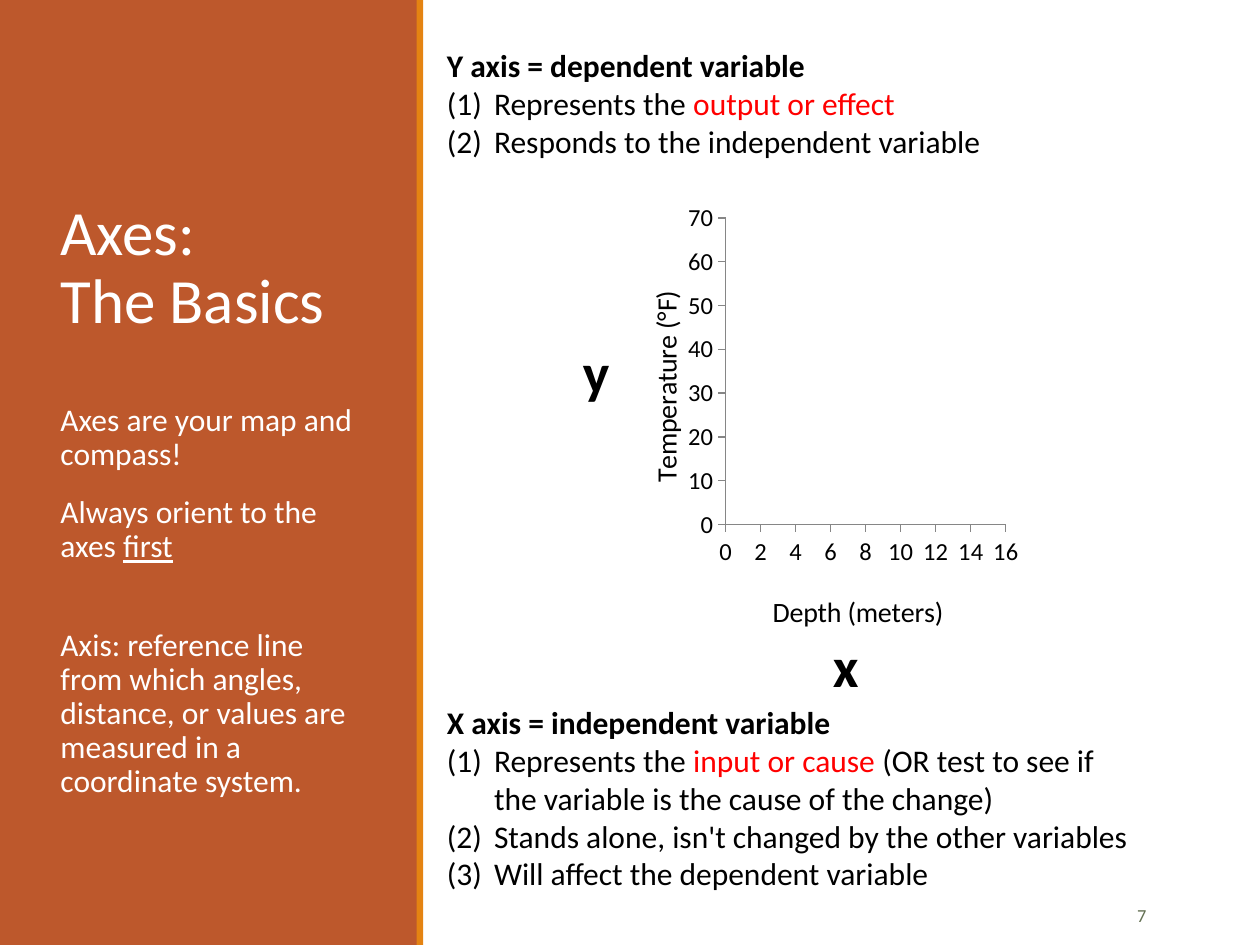
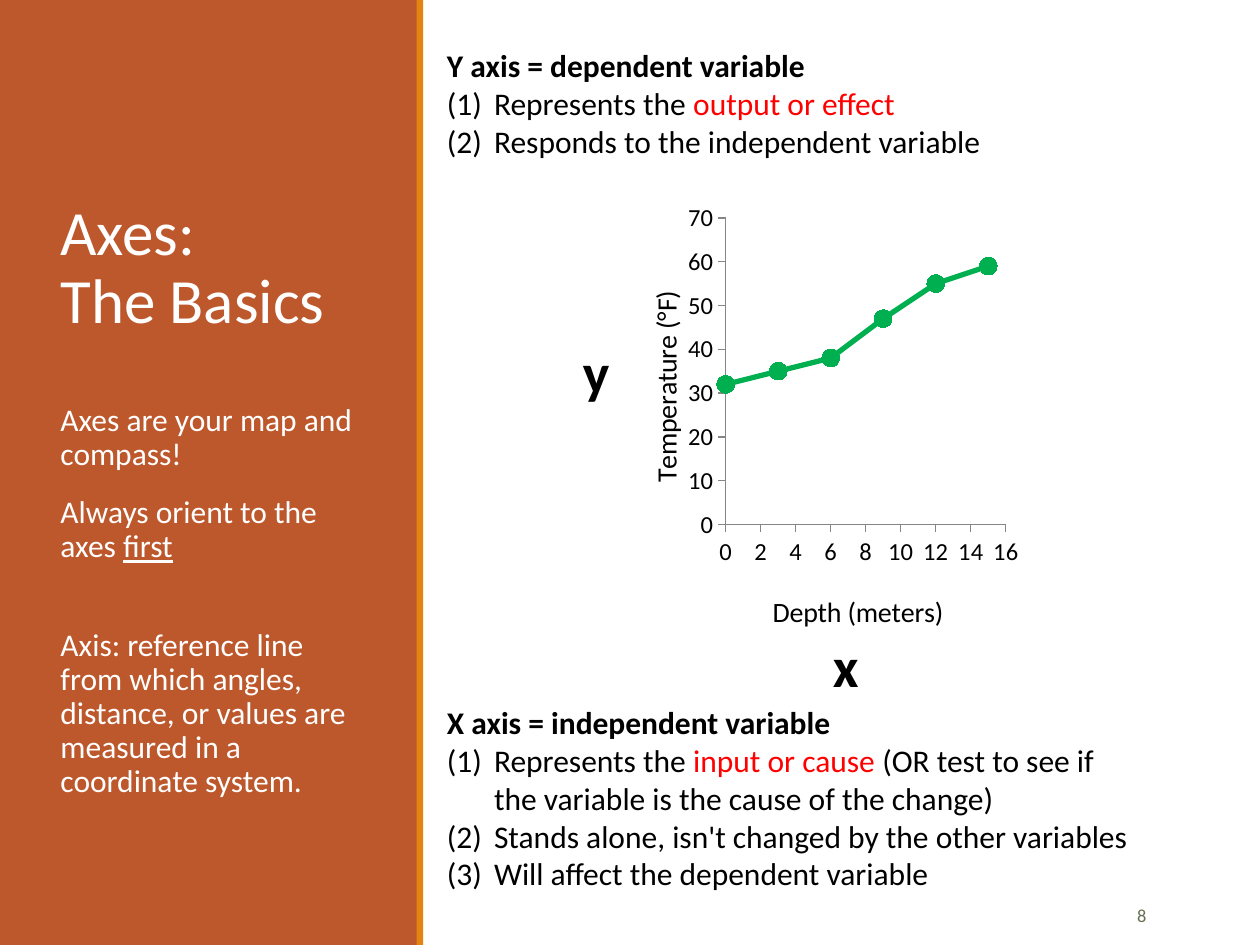
from lxml import etree
from pptx import Presentation
from pptx.chart.data import XyChartData
from pptx.dml.color import RGBColor
from pptx.enum.chart import XL_CHART_TYPE as ChartType
from pptx.enum.chart import XL_MARKER_STYLE as Marker
from pptx.enum.chart import XL_TICK_MARK as Tick
from pptx.enum.shapes import MSO_SHAPE as Shape
from pptx.enum.text import MSO_ANCHOR as Anchor
from pptx.enum.text import PP_ALIGN as Align
from pptx.oxml.ns import qn
from pptx.util import Cm, Pt

RUST = RGBColor(0xBD, 0x58, 0x2C)
ORANGE = RGBColor(0xE4, 0x83, 0x12)
GREEN = RGBColor(0x00, 0xB0, 0x50)
RED = RGBColor(0xFF, 0x00, 0x00)
OLIVE = RGBColor(0x63, 0x70, 0x52)
GRAY = RGBColor(0x86, 0x86, 0x86)
BLACK = RGBColor(0x00, 0x00, 0x00)
WHITE = RGBColor(0xFF, 0xFF, 0xFF)

FONT = "Calibri"
PAGE_WIDTH, PAGE_HEIGHT = 25.4, 19.05

# Regions as left, top, width, height in cm
PANEL = (0, 0, 8.43, PAGE_HEIGHT)
Y_NOTE = (8.76, 0.81, 12.37, 2.57)
X_NOTE = (8.76, 14.05, 14.5, 4.11)
CHART = (12.27, 3.94, 8.43, 9.09)
Y_LETTER = (11.5, 6.68, 1.3, 1.63)
X_LETTER = (16.54, 12.6, 1.27, 1.63)
PAGE_NUMBER = (20.62, 17.93, 2.74, 1.02)

DEPTHS = (0, 3, 6, 9, 12, 15)
TEMPERATURES = (32, 35, 38, 47, 55, 59)

Y_HEADING = "Y axis = dependent variable"
Y_POINTS = [
    [("Represents the ", BLACK), ("output or effect", RED)],
    [("Responds to the independent variable", BLACK)],
]
X_HEADING = "X axis = independent variable"
X_POINTS = [
    [("Represents the ", BLACK), ("input or cause ", RED),
     ("(OR test to see if the variable is the cause of the change)", BLACK)],
    [("Stands alone, isn't changed by the other variables", BLACK)],
    [("Will affect the dependent variable", BLACK)],
]

# Panel paragraphs: space before in points, size, (text, underlined) spans
PANEL_TEXT = [
    (0, 36, [("Axes:\vThe Basics", False)]),
    (36, 18, [("Axes are your map and compass!", False)]),
    (12, 18, [("Always orient to the axes ", False), ("first", True)]),
    (35, 18, [("Axis: reference line from which angles, distance, or values "
               "are measured in a coordinate system.", False)]),
]


def style(font, size, color, bold=False):
    font.name = FONT
    font.size = Pt(size)
    font.bold = bold
    font.color.rgb = color


def add_text_box(page, region):
    box = page.shapes.add_textbox(*map(Cm, region))
    box.text_frame.word_wrap = True
    return box


def add_line(page, region, text, size, color, bold=False):
    """Text box holding one styled line."""
    frame = add_text_box(page, region).text_frame
    frame.text = text
    style(frame.paragraphs[0].runs[0].font, size, color, bold)
    return frame


def add_band(page, region, color):
    band = page.shapes.add_shape(Shape.RECTANGLE, *map(Cm, region))
    band.shadow.inherit = False
    band.fill.solid()
    band.fill.fore_color.rgb = color
    band.line.fill.background()


def add_panel(page, region):
    """Coloured side panel with the title and the remarks below it."""
    left, top, width, height = region
    add_band(page, region, RUST)
    add_band(page, (left + width - 0.03, top, 0.13, height), ORANGE)

    text_top = 4.06
    frame = add_text_box(page, (left + 0.97, top + text_top, 6.65,
                                height - text_top)).text_frame
    frame.margin_top = 0
    for index, (before, size, spans) in enumerate(PANEL_TEXT):
        para = frame.add_paragraph() if index else frame.paragraphs[0]
        para.line_spacing = 0.9
        para.space_before, para.space_after = Pt(before), Pt(2)
        for position, (text, underlined) in enumerate(spans):
            if position == 0:
                para.text = text
            else:
                para.add_run().text = text
            span = para.runs[-1]
            span.font.underline = underlined
        for span in para.runs:
            style(span.font, size, WHITE)


def number_paragraph(para):
    """Hanging indent with an automatic number such as (1)."""
    properties = para._p.get_or_add_pPr()
    properties.set("marL", str(Cm(0.95)))
    properties.set("indent", str(-Cm(0.95)))
    etree.SubElement(properties, qn("a:buFont"), typeface="+mj-lt")
    etree.SubElement(properties, qn("a:buAutoNum"), type="arabicParenBoth")


def add_note(page, region, heading, points):
    """Bold heading above a numbered list."""
    frame = add_line(page, region, heading, 18, BLACK, bold=True)
    for point in points:
        para = frame.add_paragraph()
        number_paragraph(para)
        for text, color in point:
            span = para.add_run()
            span.text = text
            style(span.font, 18, color)


def set_layout(parent, before, **places):
    """Manual layout in fractions of the chart, put ahead of a child tag."""
    for old in parent.findall(qn("c:layout")):
        parent.remove(old)
    layout = etree.Element(qn("c:layout"))
    manual = etree.SubElement(layout, qn("c:manualLayout"))
    for tag, value in places.items():
        etree.SubElement(manual, qn(f"c:{tag}"), val=str(value))
    parent.find(qn(before)).addprevious(layout)


def format_axis(axis, title, top, step, title_x, title_y):
    axis.minimum_scale, axis.maximum_scale = 0, top
    axis.major_unit = step
    axis.has_major_gridlines = False
    axis.major_tick_mark = Tick.OUTSIDE
    axis.minor_tick_mark = Tick.NONE
    axis.format.line.color.rgb = GRAY
    axis.format.line.width = Pt(0.75)
    style(axis.tick_labels.font, 14, BLACK)
    frame = axis.axis_title.text_frame
    frame.text = title
    style(frame.paragraphs[0].runs[0].font, 16, BLACK)
    set_layout(axis.axis_title._element, "c:overlay",
               xMode="edge", yMode="edge", x=title_x, y=title_y)


def add_temperature_chart(page, region, show_curve):
    data = XyChartData()
    points = data.add_series("Series 1")
    for depth, temperature in zip(DEPTHS, TEMPERATURES):
        points.add_data_point(depth, temperature)
    kind = ChartType.XY_SCATTER_SMOOTH if show_curve else ChartType.XY_SCATTER
    chart = page.shapes.add_chart(kind, *map(Cm, region), data).chart
    chart.has_title = False
    chart.has_legend = False
    style(chart.font, 10, BLACK)
    chart.plots[0].vary_by_categories = False

    format_axis(chart.category_axis, "Depth (meters)", 16, 2, 0.38, 0.87)
    format_axis(chart.value_axis, "Temperature (°F)", 70, 10, 0.08, 0.2)
    set_layout(chart._chartSpace.chart.plotArea, "c:scatterChart",
               layoutTarget="inner", xMode="edge", yMode="edge",
               x=0.28, y=0.05, w=0.67, h=0.68)

    # The first slide shows only the axes
    series = chart.plots[0].series[0]
    series.smooth = show_curve
    if show_curve:
        series.format.line.color.rgb = GREEN
        series.format.line.width = Pt(3)
        series.marker.style = Marker.CIRCLE
        series.marker.size = 10
        series.marker.format.fill.solid()
        series.marker.format.fill.fore_color.rgb = GREEN
        series.marker.format.line.color.rgb = GREEN
    else:
        series.format.line.fill.background()
        series.marker.style = Marker.NONE


def add_page_number(page, region, number):
    frame = add_line(page, region, str(number), 10.5, OLIVE)
    frame.vertical_anchor = Anchor.MIDDLE
    frame.paragraphs[0].alignment = Align.RIGHT


def add_axes_slide(deck, number, show_curve):
    page = deck.slides.add_slide(deck.slide_layouts[6])
    add_panel(page, PANEL)
    add_temperature_chart(page, CHART, show_curve)
    add_line(page, X_LETTER, "x", 32, BLACK, bold=True)
    add_line(page, Y_LETTER, "y", 32, BLACK, bold=True)
    add_note(page, Y_NOTE, Y_HEADING, Y_POINTS)
    add_note(page, X_NOTE, X_HEADING, X_POINTS)
    add_page_number(page, PAGE_NUMBER, number)


def main():
    deck = Presentation()
    deck.slide_width, deck.slide_height = Cm(PAGE_WIDTH), Cm(PAGE_HEIGHT)
    add_axes_slide(deck, 7, show_curve=False)
    add_axes_slide(deck, 8, show_curve=True)
    deck.save("out.pptx")


if __name__ == "__main__":
    main()
